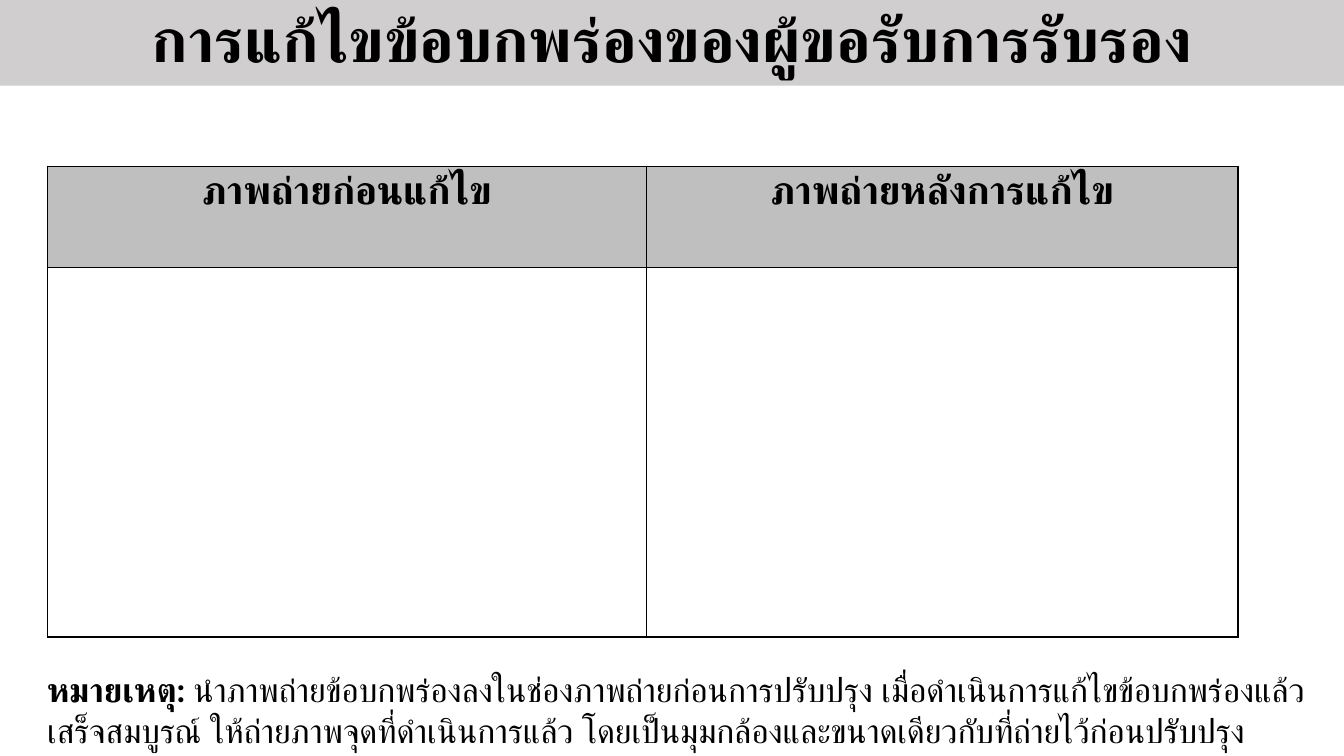
from dataclasses import dataclass

import pptx
import pptx.dml.color
import pptx.enum.text
import pptx.oxml
import pptx.oxml.ns
import pptx.util
from pptx.util import Inches

COLORS = {"text": "000000", "border": "000000", "band": "D0CECE",
          "header": "BFBFBF", "blank": "FFFFFF"}
FONT = "Lato"


@dataclass
class PhotoColumn:
    heading: str
    width: float


PHOTO_COLUMNS = [
    PhotoColumn("ภาพถ่ายก่อนแก้ไข", 5.94),
    PhotoColumn("ภาพถ่ายหลังการแก้ไข", 5.87),
]
ROW_HEIGHTS = [1, 3.67]
TITLE = "การแก้ไขข้อบกพร่องของผู้ขอรับการรับรอง"
NOTE_LABEL = "หมายเหตุ: "
NOTE = ("นำภาพถ่ายข้อบกพร่องลงในช่องภาพถ่ายก่อนการปรับปรุง "
        "เมื่อดำเนินการแก้ไขข้อบกพร่องแล้วเสร็จสมบูรณ์ "
        "ให้ถ่ายภาพจุดที่ดำเนินการแล้ว "
        "โดยเป็นมุมกล้องและขนาดเดียวกับที่ถ่ายไว้ก่อนปรับปรุง")


def rgb(name: str) -> pptx.dml.color.RGBColor:
    return pptx.dml.color.RGBColor.from_string(COLORS[name])


def add_span(para, text: str, size: float, bold: bool) -> None:
    """Append a run whose Latin and Thai typefaces are both set."""
    span = para.add_run()
    span.text = text
    span.font.size = pptx.util.Pt(size)
    span.font.bold = bold
    span.font.name = FONT
    span.font.color.rgb = rgb("text")
    thai = pptx.oxml.parse_xml(
        f'<a:cs {pptx.oxml.ns.nsdecls("a")} typeface="{FONT}"/>')
    span.font._element.append(thai)


def fill_cell(cell, color: str) -> None:
    """Fill a cell and rule all four of its sides."""
    cell.fill.solid()
    cell.fill.fore_color.rgb = rgb(color)
    properties = cell._tc.get_or_add_tcPr()
    for index, side in enumerate("LRTB"):
        properties.insert(index, pptx.oxml.parse_xml(
            f'<a:ln{side} {pptx.oxml.ns.nsdecls("a")} w="12700"><a:solidFill>'
            f'<a:srgbClr val="{COLORS["border"]}"/></a:solidFill></a:ln{side}>'))


def add_title(page) -> None:
    title = page.shapes.title
    title.left, title.top = Inches(0), Inches(0)
    title.width, title.height = Inches(13.33), Inches(0.85)
    title.fill.solid()
    title.fill.fore_color.rgb = rgb("band")
    title.text_frame.vertical_anchor = pptx.enum.text.MSO_ANCHOR.MIDDLE
    title.text_frame.auto_size = pptx.enum.text.MSO_AUTO_SIZE.NONE
    para = title.text_frame.paragraphs[0]
    para.alignment = pptx.enum.text.PP_ALIGN.CENTER
    para.line_spacing = 0.9
    add_span(para, TITLE, 44, True)


def add_photo_table(page) -> None:
    table = page.shapes.add_table(
        len(ROW_HEIGHTS), len(PHOTO_COLUMNS), Inches(0.47), Inches(1.65),
        Inches(sum(column.width for column in PHOTO_COLUMNS)),
        Inches(sum(ROW_HEIGHTS))).table
    table.horz_banding = False
    for row, height in zip(table.rows, ROW_HEIGHTS):
        row.height = Inches(height)
    for index, column in enumerate(PHOTO_COLUMNS):
        table.columns[index].width = Inches(column.width)
        header = table.cell(0, index)
        header.margin_top = header.margin_bottom = Inches(0)
        para = header.text_frame.paragraphs[0]
        para.alignment = pptx.enum.text.PP_ALIGN.CENTER
        add_span(para, column.heading, 28, True)
        fill_cell(header, "header")
        fill_cell(table.cell(1, index), "blank")


def add_note(page) -> None:
    box = page.shapes.add_textbox(
        Inches(0.37), Inches(6.59), Inches(12.82), Inches(0.91))
    box.text_frame.word_wrap = True
    box.text_frame.auto_size = pptx.enum.text.MSO_AUTO_SIZE.SHAPE_TO_FIT_TEXT
    para = box.text_frame.paragraphs[0]
    add_span(para, NOTE_LABEL, 24, True)
    add_span(para, NOTE, 24, False)


def main() -> None:
    deck = pptx.Presentation()
    deck.slide_width, deck.slide_height = Inches(13.33), Inches(7.5)
    page = deck.slides.add_slide(deck.slide_layouts.get_by_name("Title Only"))
    add_title(page)
    add_photo_table(page)
    add_note(page)
    deck.save("out.pptx")


if __name__ == "__main__":
    main()
